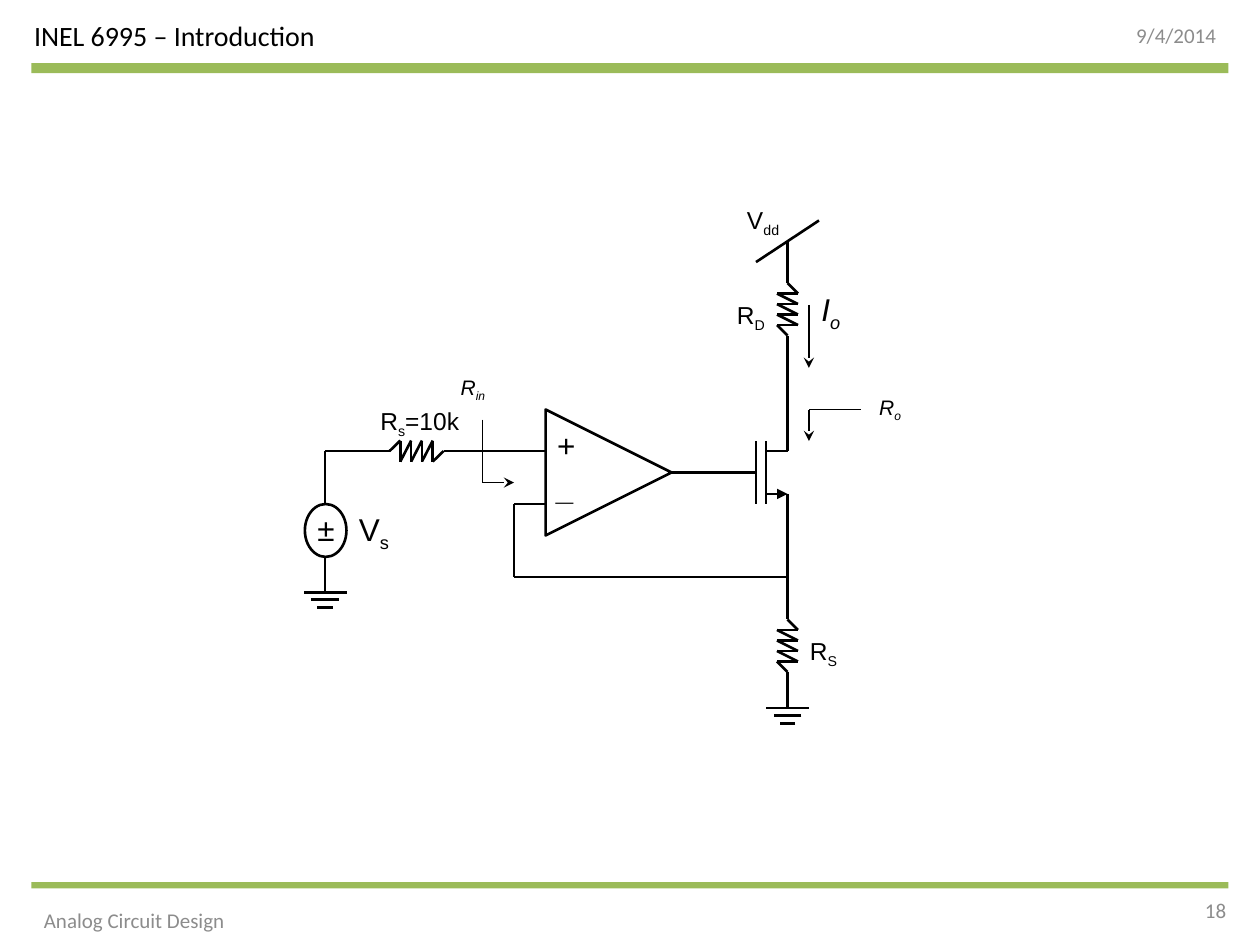
from itertools import pairwise

from lxml import etree
from pptx import Presentation
from pptx.dml.color import RGBColor
from pptx.enum import shapes, text
from pptx.oxml.ns import qn
from pptx.util import Inches, Pt

COLORS = {"ink": "000000", "bar": "9BBB59", "muted": "8C8C8C"}
STEP = 1 / 12  # drawing grid of the circuit, in inches
SUPPLY_X, SOURCE_X, FEEDBACK_X = 6.25, 2.58, 4.08
INPUT_Y, OUTPUT_Y, FEEDBACK_Y = 3.58, 3.75, 4.58


def color(name):
    return RGBColor.from_string(COLORS[name])


def box(left, top, width, height):
    return [Inches(value) for value in (left, top, width, height)]


def style_paragraph(paragraph, size, font, ink, italic=False, right=False):
    paragraph.alignment = text.PP_ALIGN.RIGHT if right else text.PP_ALIGN.LEFT
    paragraph.font.size = Pt(size)
    paragraph.font.name = font
    paragraph.font.italic = italic
    paragraph.font.color.rgb = color(ink)


def add_title(slide, wording):
    title = slide.shapes.title
    title.left, title.top, title.width, title.height = box(0.17, 0.08, 3.33, 0.4)
    frame = title.text_frame
    frame.text = wording
    frame.auto_size = text.MSO_AUTO_SIZE.NONE
    frame.vertical_anchor = text.MSO_ANCHOR.MIDDLE
    style_paragraph(frame.paragraphs[0], 16, "Calibri", "ink")


def add_bar(slide, top, height):
    bar = slide.shapes.add_shape(shapes.MSO_SHAPE.RECTANGLE, *box(0.25, top, 9.5, height))
    bar.shadow.inherit = False
    bar.fill.solid()
    bar.fill.fore_color.rgb = color("bar")
    bar.line.fill.background()


def add_margin_note(slide, place, wording, right=False):
    frame = slide.shapes.add_textbox(*box(*place)).text_frame
    frame.word_wrap = True
    frame.vertical_anchor = text.MSO_ANCHOR.MIDDLE
    frame.text = wording
    style_paragraph(frame.paragraphs[0], 12, "Calibri", "muted", right=right)


def add_label(slide, place, symbol, subscript="", rest="", size=14, italic=False,
              right=False, wrap=False):
    frame = slide.shapes.add_textbox(*box(*place)).text_frame
    frame.word_wrap = wrap
    frame.auto_size = text.MSO_AUTO_SIZE.SHAPE_TO_FIT_TEXT
    paragraph = frame.paragraphs[0]
    style_paragraph(paragraph, size, "Arial", "ink", italic, right)
    for wording, baseline in ((symbol, 0), (subscript, -25000), (rest, 0)):
        if wording:
            run = paragraph.add_run()
            run.text = wording
            if baseline:
                run._r.get_or_add_rPr().set("baseline", str(baseline))


def add_wire(slide, *points, weight=1.5, head=None, tail=None):
    """Join the points by straight lines; arrowheads go to the first and last end."""
    segments = list(pairwise(points))
    for index, (start, end) in enumerate(segments):
        line = slide.shapes.add_connector(
            shapes.MSO_CONNECTOR.STRAIGHT, *[Inches(value) for value in (*start, *end)])
        line.line.color.rgb = color("ink")
        line.line.width = Pt(weight)
        outline = line.line._get_or_add_ln()
        if head and index == 0:
            etree.SubElement(outline, qn("a:headEnd"), type=head)
        if tail and index == len(segments) - 1:
            etree.SubElement(outline, qn("a:tailEnd"), type=tail)
        etree.SubElement(line._element.spPr, qn("a:effectLst"))


def add_resistor(slide, x, y, horizontal=False):
    """Draw nine steps of resistor from (x, y): leads of two steps and a zigzag."""
    profile = [(0, 0), (2, 0)]
    for along in range(3, 7):
        profile += [(along, 1), (along, -1)]
    profile += [(7, 0), (9, 0)]
    if horizontal:
        points = [(x + along * STEP * 1.03, y - across * STEP) for along, across in profile]
    else:
        points = [(x + across * STEP, y + along * STEP) for along, across in profile]
    add_wire(slide, *points)


def add_ground(slide, x, y):
    """Draw a lead from (x, y) and three shrinking bars below it."""
    add_wire(slide, (x, y), (x, y + 0.12))
    for level, half in enumerate((0.17, 0.11, 0.06)):
        bar_y = y + 0.12 + level * 0.06
        add_wire(slide, (x + half, bar_y), (x - half, bar_y))


def add_outline(slide, kind, place, rotation=0):
    outline = slide.shapes.add_shape(kind, *box(*place))
    outline.shadow.inherit = False
    outline.rotation = rotation
    outline.fill.background()
    outline.line.color.rgb = color("ink")
    outline.line.width = Pt(1.5)


def add_source(slide):
    add_wire(slide, (SOURCE_X, 4), (SOURCE_X, INPUT_Y), (2.92, INPUT_Y))
    add_resistor(slide, 2.92, INPUT_Y, horizontal=True)
    add_wire(slide, (3.67, INPUT_Y), (4.33, INPUT_Y))
    add_outline(slide, shapes.MSO_SHAPE.OVAL, (2.42, 4, 0.33, 0.42))
    add_wire(slide, (SOURCE_X, 4.42), (SOURCE_X, 4.58))
    add_ground(slide, SOURCE_X, 4.58)
    add_label(slide, (2.42, 4, 0.33, 0.4), "±", size=18, wrap=True)
    add_label(slide, (2.75, 4, 0.46, 0.4), "V", "s", size=18)
    add_label(slide, (2.92, 3.17, 0.84, 0.34), "R", "s", "=10k")


def add_amplifier(slide):
    add_outline(slide, shapes.MSO_SHAPE.ISOSCELES_TRIANGLE, (4.33, 3.25, 1, 1), 90)
    add_label(slide, (4.32, 3.33, 0.35, 0.4), "+", size=18, italic=True)
    add_label(slide, (4.33, 3.67, 0.34, 0.4), "_", size=18, italic=True)
    add_wire(slide, (5.33, OUTPUT_Y), (6, OUTPUT_Y))
    add_wire(slide, (4.33, 4), (FEEDBACK_X, 4), (FEEDBACK_X, FEEDBACK_Y),
             (SUPPLY_X, FEEDBACK_Y))


def add_transistor(slide):
    for plate_x in (6, 6.08):
        add_wire(slide, (plate_x, 3.5), (plate_x, 4))
    add_wire(slide, (6.08, INPUT_Y), (SUPPLY_X, INPUT_Y))
    add_wire(slide, (SUPPLY_X, 3.92), (6.08, 3.92), head="triangle")


def add_output_branch(slide):
    add_wire(slide, (6.5, 1.75), (6, 2.08))
    add_wire(slide, (SUPPLY_X, 1.92), (SUPPLY_X, 2.08))
    add_resistor(slide, SUPPLY_X, 2.08)
    add_wire(slide, (SUPPLY_X, 2.83), (SUPPLY_X, INPUT_Y))
    add_wire(slide, (SUPPLY_X, 3.92), (SUPPLY_X, 4.75))
    add_resistor(slide, SUPPLY_X, 4.75)
    add_ground(slide, SUPPLY_X, 5.5)
    add_label(slide, (5.83, 1.58, 0.48, 0.34), "V", "dd")
    add_label(slide, (5.75, 2.33, 0.44, 0.34), "R", "D")
    add_label(slide, (6.33, 5, 0.44, 0.34), "R", "S")


def add_measurements(slide):
    add_wire(slide, (6.42, 2.42), (6.42, 2.92), tail="stealth")
    add_label(slide, (6.42, 2.25, 0.36, 0.4), "I", "o", size=18, italic=True)
    add_wire(slide, (3.83, 3.33), (3.83, 3.83), (4.08, 3.83), weight=0.75, tail="stealth")
    add_label(slide, (3.54, 2.92, 0.41, 0.3), "R", "in", size=12, italic=True, right=True)
    add_wire(slide, (6.83, 3.25), (6.42, 3.25), (6.42, 3.5), weight=0.75, tail="stealth")
    add_label(slide, (6.86, 3.08, 0.39, 0.3), "R", "o", size=12, italic=True, right=True)


def main():
    deck = Presentation()
    deck.slide_width, deck.slide_height = Inches(10), Inches(7.5)
    slide = deck.slides.add_slide(deck.slide_layouts[5])
    add_title(slide, "INEL 6995 – Introduction")
    add_bar(slide, 0.5, 0.08)
    add_bar(slide, 7, 0.05)
    add_margin_note(slide, (7.42, 0.08, 2.33, 0.4), "9/4/2014", right=True)
    add_margin_note(slide, (0.25, 7.1, 1.75, 0.4), "Analog Circuit Design")
    add_margin_note(slide, (7.5, 7.02, 2.33, 0.4), "18", right=True)
    add_source(slide)
    add_amplifier(slide)
    add_transistor(slide)
    add_output_branch(slide)
    add_measurements(slide)
    deck.save("out.pptx")


if __name__ == "__main__":
    main()
